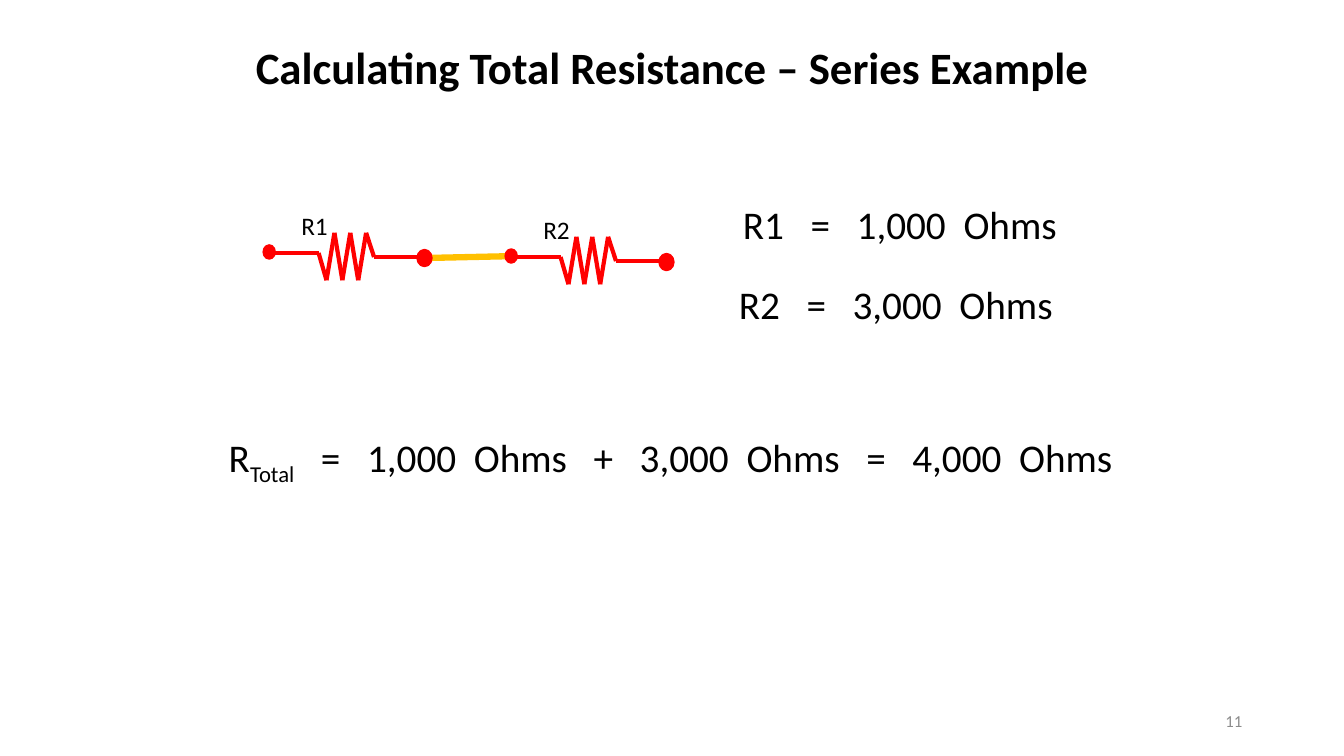
from dataclasses import dataclass
from itertools import pairwise

from lxml.etree import SubElement
from pptx import Presentation
from pptx.dml.color import RGBColor
from pptx.enum.shapes import MSO_CONNECTOR, MSO_SHAPE
from pptx.enum.text import MSO_ANCHOR, PP_ALIGN
from pptx.oxml.ns import qn
from pptx.util import Inches, Pt


@dataclass(frozen=True)
class Theme:
    font: str = "Calibri"
    text: RGBColor = RGBColor(0, 0, 0)
    muted: RGBColor = RGBColor(0x8C, 0x8C, 0x8C)
    resistor: RGBColor = RGBColor(0xFF, 0, 0)
    wire: RGBColor = RGBColor(0xFF, 0xC0, 0)
    title_size: int = 32
    equation_size: int = 28
    label_size: int = 18
    number_size: int = 12


THEME = Theme()


def format_text(shape, size, color=THEME.text, align=PP_ALIGN.LEFT,
                anchor=MSO_ANCHOR.TOP, bold=False):
    frame = shape.text_frame
    frame.word_wrap = True
    frame.vertical_anchor = anchor
    para = frame.paragraphs[0]
    para.alignment = align
    for span in para.runs:
        span.font.name = THEME.font
        span.font.size = Pt(size)
        span.font.bold = bold
        span.font.color.rgb = color


def add_text(shapes, text, left, top, width, height, size, **style):
    box = shapes.add_textbox(Inches(left), Inches(top), Inches(width), Inches(height))
    box.text_frame.text = text
    format_text(box, size, **style)
    return box


deck = Presentation()
deck.slide_width, deck.slide_height = Inches(13.33), Inches(7.5)
slide = deck.slides.add_slide(deck.slide_layouts[5])

# Title
title = slide.shapes.title
title.left, title.top = Inches(2.17), Inches(0.34)
title.width, title.height = Inches(9), Inches(0.77)
title.text_frame.text = "Calculating Total Resistance – Series Example"
format_text(title, THEME.title_size, align=PP_ALIGN.CENTER, bold=True)

# Circuit: a wire joining two resistors
LEAD = 0.43
TOOTH = 0.55 / 7
LENGTH = 1.42
RESISTORS = (("R1", 2.73, 2.51), ("R2", 5.13, 2.55))

zigzag = [(LEAD + TOOTH * step, 0.27 if step % 2 else -0.2) for step in range(1, 7)]
outline = [(0, 0), (LEAD, 0), *zigzag, (LEAD + 0.55, 0.04), (LENGTH, 0.04)]

segments = [((4.21, 2.56), (5.13, 2.54), THEME.wire, 4.5)]
for name, left, middle in RESISTORS:
    points = [(left + x, middle + y) for x, y in outline]
    segments += [(start, end, THEME.resistor, 3) for start, end in pairwise(points)]

circuit = slide.shapes.add_group_shape().shapes
for start, end, color, line_width in segments:
    segment = circuit.add_connector(MSO_CONNECTOR.STRAIGHT,
                                    *map(Inches, start), *map(Inches, end))
    segment.line.color.rgb = color
    segment.line.width = Pt(line_width)
    SubElement(segment.element.spPr, qn("a:effectLst"))

for name, left, middle in RESISTORS:
    for x, y, line_width in ((LENGTH, -0.02, 3), (-0.12, -0.08, 1)):
        terminal = circuit.add_shape(MSO_SHAPE.OVAL, Inches(left + x), Inches(middle + y),
                                     Inches(0.12), Inches(0.14))
        terminal.shadow.inherit = False
        terminal.fill.solid()
        terminal.fill.fore_color.rgb = THEME.resistor
        terminal.line.color.rgb = THEME.resistor
        terminal.line.width = Pt(line_width)

    add_text(circuit, name, left + 0.16, middle - 0.47, 0.47, 0.4, THEME.label_size)

# Values and total
for text, left, top in (("R1   =   1,000  Ohms", 7.27, 1.94),
                        ("R2   =   3,000  Ohms", 7.23, 2.73)):
    add_text(slide.shapes, text, left, top, 3.67, 0.57, THEME.equation_size)

total = add_text(slide.shapes, "R", 2.17, 4.25, 9.59, 0.57, THEME.equation_size)
total_para = total.text_frame.paragraphs[0]
subscript = total_para.add_run()
subscript.text = "Total"
total_para.add_run().text = "   =   1,000  Ohms   +   3,000  Ohms   =   4,000  Ohms"
format_text(total, THEME.equation_size)
subscript.font._element.set("baseline", "-25000")

# Slide number
add_text(slide.shapes, "11", 9.42, 6.95, 3, 0.4, THEME.number_size, color=THEME.muted,
         align=PP_ALIGN.RIGHT, anchor=MSO_ANCHOR.MIDDLE)

deck.save("out.pptx")
